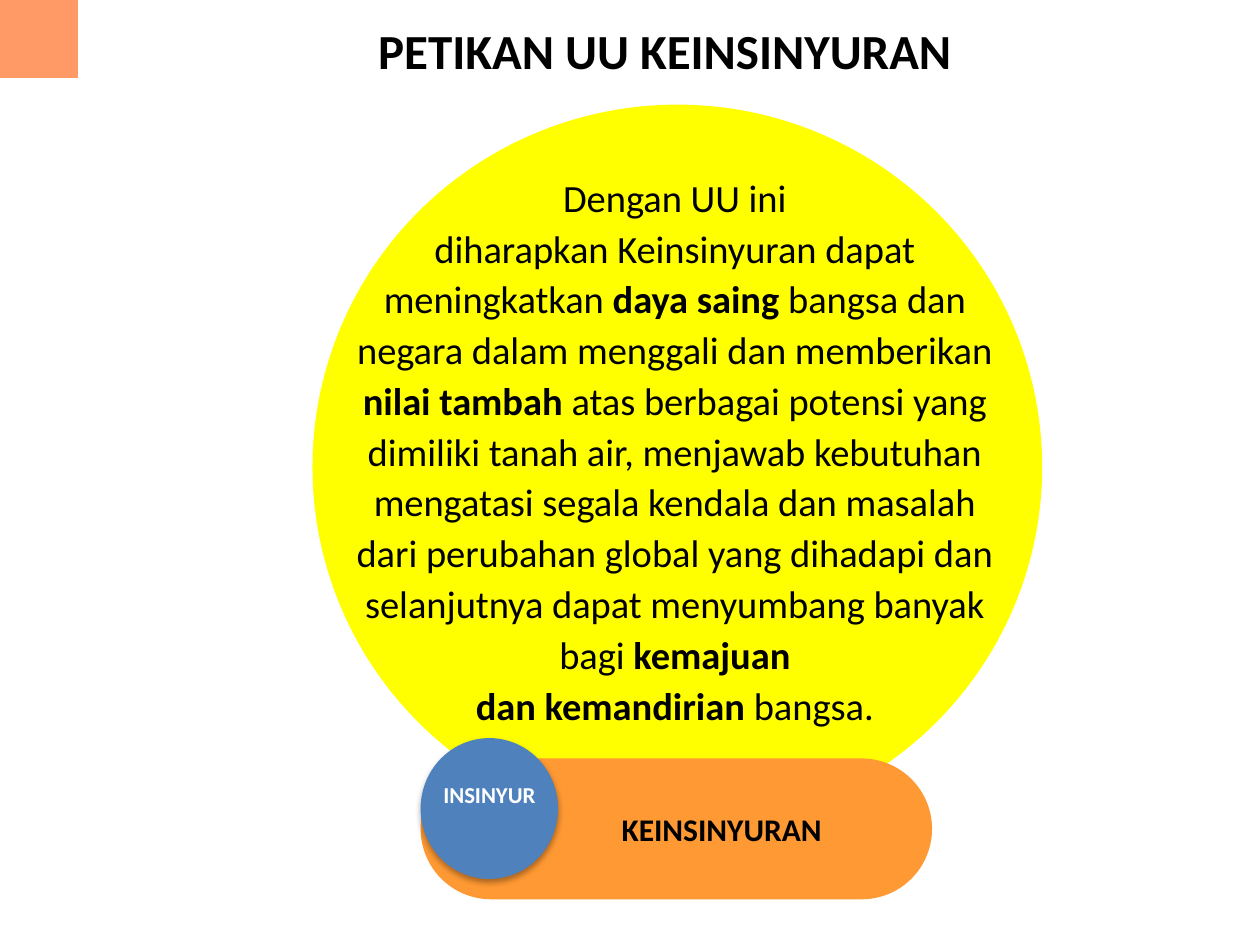
from lxml.etree import SubElement
from pptx import Presentation
from pptx.dml.color import RGBColor
from pptx.enum.shapes import MSO_SHAPE as Preset
from pptx.enum.text import MSO_ANCHOR as Anchor, MSO_AUTO_SIZE as AutoSize, PP_ALIGN as Align
from pptx.oxml.ns import qn
from pptx.util import Cm, Pt

BLACK = RGBColor(0x00, 0x00, 0x00)
WHITE = RGBColor(0xFF, 0xFF, 0xFF)
CORAL = RGBColor(0xFF, 0x99, 0x66)
YELLOW = RGBColor(0xFF, 0xFF, 0x00)
ORANGE = RGBColor(0xFF, 0x99, 0x33)
BLUE = RGBColor(0x4F, 0x81, 0xBD)

# Each paragraph is a list of (text, bold) runs.
LAW_EXCERPT = [
    [("Dengan UU ini", False)],
    [
        ("diharapkan Keinsinyuran dapat meningkatkan ", False),
        ("daya saing ", True),
        ("bangsa dan negara dalam menggali dan memberikan ", False),
        ("nilai tambah ", True),
        ("atas berbagai potensi yang dimiliki tanah air, menjawab kebutuhan "
         "mengatasi segala kendala dan masalah dari perubahan global yang "
         "dihadapi dan selanjutnya dapat menyumbang banyak bagi ", False),
        ("kemajuan", True),
    ],
    [("dan kemandirian ", True), ("bangsa.", False)],
]


def write_text(shape, paragraphs, size, color=BLACK, anchor=Anchor.MIDDLE,
               line_spacing=None, margins=(0.25, 0.13, 0.25, 0.13)):
    """Fill a shape with centred runs; margins are left, top, right, bottom in cm."""
    frame = shape.text_frame
    frame.word_wrap = True
    frame.auto_size = AutoSize.NONE
    frame.vertical_anchor = anchor
    (frame.margin_left, frame.margin_top,
     frame.margin_right, frame.margin_bottom) = map(Cm, margins)
    for index, runs in enumerate(paragraphs):
        paragraph = frame.add_paragraph() if index else frame.paragraphs[0]
        paragraph.alignment = Align.CENTER
        paragraph.line_spacing = line_spacing
        for text, bold in runs:
            run = paragraph.add_run()
            run.text = text
            run.font.name = "Calibri"
            run.font.size = Pt(size)
            run.font.bold = bold
            run.font.color.rgb = color


def add_filled_shape(slide, preset, left, top, width, height, color):
    shape = slide.shapes.add_shape(preset, Cm(left), Cm(top), Cm(width), Cm(height))
    shape.fill.solid()
    shape.fill.fore_color.rgb = color
    shape.line.fill.background()
    shape.shadow.inherit = False
    return shape


def add_drop_shadow(shape, blur, distance, opacity):
    """Cast a black shadow straight down; blur and distance in points, opacity in percent."""
    effects = shape.element.spPr.find(qn("a:effectLst"))
    shadow = SubElement(effects, qn("a:outerShdw"), blurRad=str(Pt(blur)),
                        dist=str(Pt(distance)), dir="5400000", rotWithShape="0")
    color = SubElement(shadow, qn("a:srgbClr"), val=str(BLACK))
    SubElement(color, qn("a:alpha"), val=str(opacity * 1000))


def add_title(slide, text):
    title = slide.shapes.title
    title.left, title.top, title.width, title.height = Cm(2.11), Cm(0.28), Cm(22.58), Cm(1.45)
    write_text(title, [[(text, True)]], 28)


def add_excerpt(slide):
    add_filled_shape(slide, Preset.OVAL, 6.3, 2.11, 14.71, 14.61, YELLOW)
    excerpt = slide.shapes.add_textbox(Cm(6.71), Cm(3.28), Cm(13.79), Cm(11.63))
    write_text(excerpt, LAW_EXCERPT, 22, anchor=Anchor.TOP, line_spacing=1.1)


def add_engineering_badge(slide):
    left, height = 8.48, 2.84
    bar = add_filled_shape(slide, Preset.ROUNDED_RECTANGLE, left, 15.29, 10.31, height, ORANGE)
    bar.adjustments[0] = 0.5
    write_text(bar, [[("KEINSINYURAN", True)]], 18, margins=(2.08, 0.13, 0.25, 0.13))

    circle = add_filled_shape(slide, Preset.OVAL, left, 14.88, 2.77, height, BLUE)
    add_drop_shadow(circle, blur=3.5, distance=2.2, opacity=32)
    write_text(circle, [[("INSINYUR", True)]], 13, color=WHITE, margins=(0, 0.13, 0, 0.69))


def main():
    presentation = Presentation()
    presentation.slide_width, presentation.slide_height = Cm(25.4), Cm(19.05)
    slide = presentation.slides.add_slide(presentation.slide_layouts[5])
    add_title(slide, "PETIKAN UU KEINSINYURAN")
    add_filled_shape(slide, Preset.RECTANGLE, 0, 0, 1.57, 1.57, CORAL)
    add_excerpt(slide)
    add_engineering_badge(slide)
    presentation.save("out.pptx")


if __name__ == "__main__":
    main()
